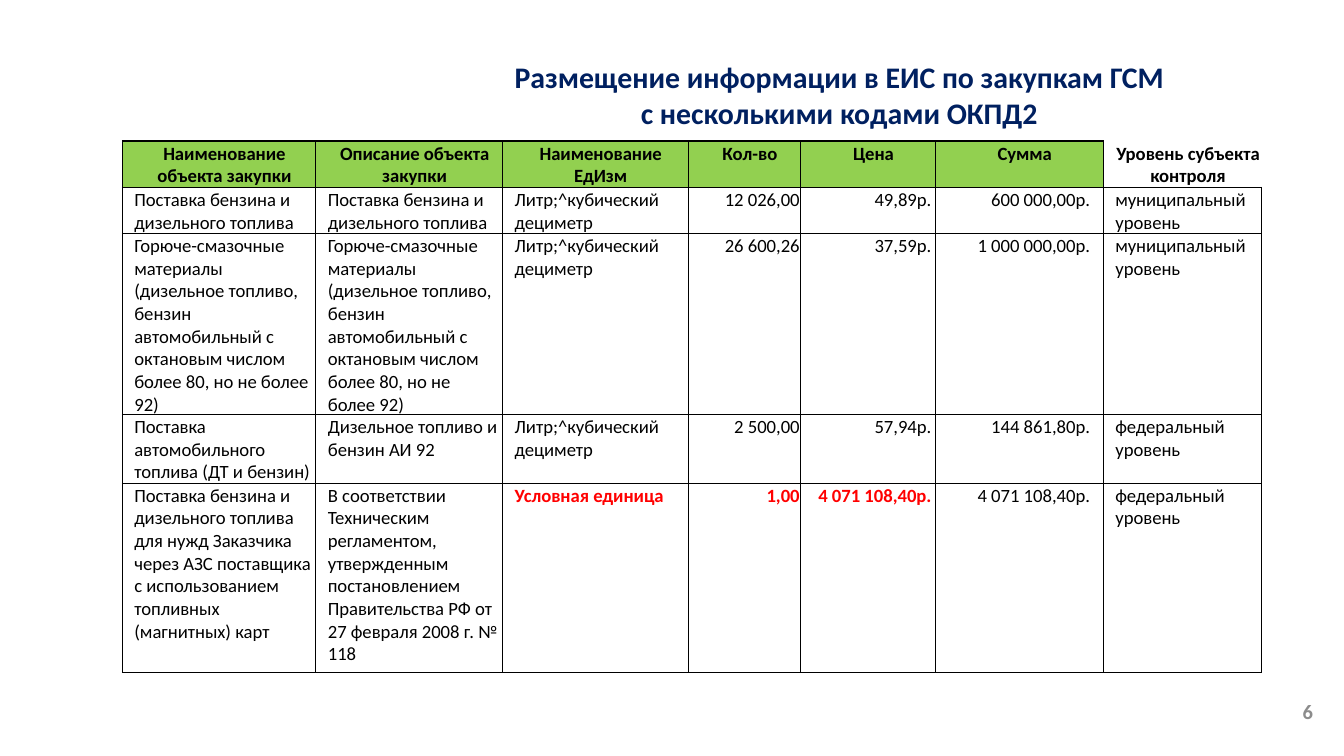
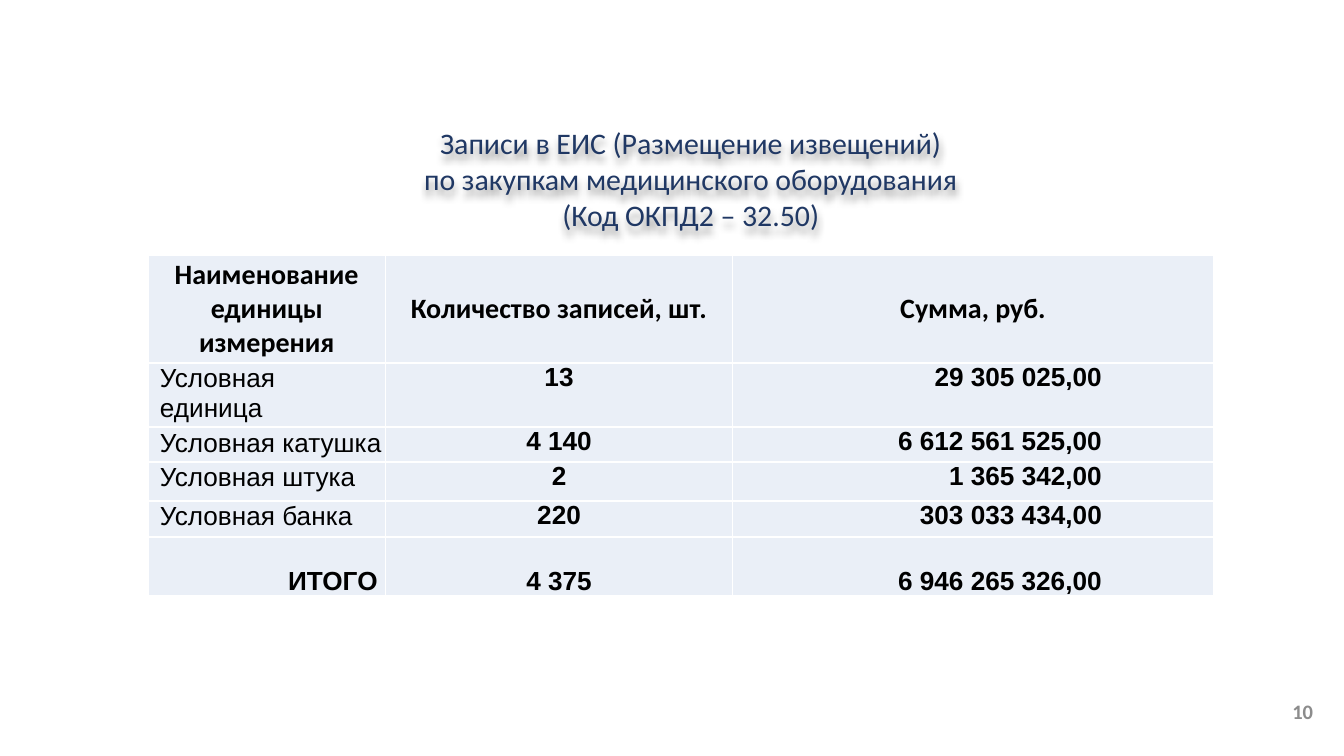
"""Builds two slides of procurement tables with shared titles and page numbers."""
from dataclasses import dataclass, replace

from lxml.etree import SubElement
from pptx import Presentation
from pptx.dml.color import RGBColor
from pptx.enum.text import MSO_ANCHOR as Anchor, MSO_AUTO_SIZE as AutoSize, PP_ALIGN as Align
from pptx.oxml.ns import qn
from pptx.util import Inches, Pt

WIDTH, HEIGHT = Inches(10), Inches(5.625)
COLOURS = {
    "black": "000000", "white": "FFFFFF", "navy": "002060", "blue": "203864",
    "grey": "8C8C8C", "red": "FF0000", "green": "92D050", "pale": "EAEFF7",
}
Insets = tuple[float, float, float, float]
BOX_INSETS = (0.07, 0.04, 0.07, 0.04)


@dataclass(frozen=True)
class TextStyle:
    size: float = 10
    colour: str = "black"
    bold: bool = False
    font: str = "Calibri"
    align: Align = Align.LEFT
    anchor: Anchor = Anchor.TOP
    insets: Insets = BOX_INSETS
    indent: float = 0


@dataclass(frozen=True)
class CellStyle:
    text: TextStyle
    fill: str | None = None
    line: str = "black"
    left: float = 0.5
    right: float = 0.5
    top: float = 0.5
    bottom: float = 0.5


@dataclass(frozen=True)
class Area:
    """A place on the slide, in per cent of its width and height."""
    left: float
    top: float
    width: float
    height: float

    def lengths(self) -> tuple[int, int, int, int]:
        return across(self.left), down(self.top), across(self.width), down(self.height)


@dataclass(frozen=True)
class Grid:
    area: Area
    columns: tuple[float, ...]
    rows: tuple[float, ...]
    cells: list[list[str]]
    styles: list[list[CellStyle]]


def across(percent: float) -> int:
    return round(WIDTH * percent / 100)


def down(percent: float) -> int:
    return round(HEIGHT * percent / 100)


def colour(name: str) -> RGBColor:
    return RGBColor.from_string(COLOURS[name])


def write(frame, text: str, style: TextStyle) -> None:
    frame.text = text
    frame.word_wrap = True
    for para in frame.paragraphs:
        para.alignment = style.align
        if style.indent:
            properties = para._p.get_or_add_pPr()
            properties.set("marL", str(Inches(style.indent)))
            properties.set("indent", "0")
        for span in para.runs:
            span.font.name = style.font
            span.font.size = Pt(style.size)
            span.font.bold = style.bold
            span.font.color.rgb = colour(style.colour)


def set_insets(holder, style: TextStyle) -> None:
    holder.vertical_anchor = style.anchor
    sides = ("left", "top", "right", "bottom")
    for side, inset in zip(sides, style.insets):
        setattr(holder, f"margin_{side}", Inches(inset))


def add_text(page, area: Area, text: str, style: TextStyle):
    box = page.shapes.add_textbox(*area.lengths())
    write(box.text_frame, text, style)
    set_insets(box.text_frame, style)
    return box


def add_shadow(box) -> None:
    effects = SubElement(box._element.spPr, qn("a:effectLst"))
    shadow = SubElement(effects, qn("a:outerShdw"), blurRad="50800", dist="38100", dir="5400000")
    shade = SubElement(shadow, qn("a:srgbClr"), val=COLOURS["black"])
    SubElement(shade, qn("a:alpha"), val="40000")


def set_borders(cell, style: CellStyle) -> None:
    properties = cell._tc.get_or_add_tcPr()
    widths = (style.left, style.right, style.top, style.bottom)
    for position, (side, width) in enumerate(zip("LRTB", widths)):
        line = SubElement(properties, qn(f"a:ln{side}"), w=str(Pt(width)))
        properties.insert(position, line)
        if width:
            fill = SubElement(line, qn("a:solidFill"))
            SubElement(fill, qn("a:srgbClr"), val=COLOURS[style.line])
        else:
            SubElement(line, qn("a:noFill"))


def format_cell(cell, text: str, style: CellStyle) -> None:
    write(cell.text_frame, text, style.text)
    set_insets(cell, style.text)
    if style.fill:
        cell.fill.solid()
        cell.fill.fore_color.rgb = colour(style.fill)
    else:
        cell.fill.background()
    set_borders(cell, style)


def add_grid(page, grid: Grid) -> None:
    frame = page.shapes.add_table(len(grid.rows), len(grid.columns), *grid.area.lengths())
    table = frame.table
    table.first_row = table.horz_banding = False
    for column, width in zip(table.columns, grid.columns):
        column.width = across(width)
    for row, height in zip(table.rows, grid.rows):
        row.height = down(height)
    for row, texts, styles in zip(table.rows, grid.cells, grid.styles):
        for cell, text, style in zip(row.cells, texts, styles):
            format_cell(cell, text, style)
    frame.height = down(grid.area.height)


def add_page(deck, number: int):
    page = deck.slides.add_slide(deck.slide_layouts[6])
    style = TextStyle(11, "grey", True, align=Align.RIGHT, anchor=Anchor.MIDDLE)
    add_text(page, Area(75.9, 91.38, 22.5, 5.33), str(number), style)
    return page


def fuel_grid() -> Grid:
    plain = TextStyle(insets=(0.01, 0.01, 0.01, 0), indent=0.08)
    body = CellStyle(plain)
    amount = CellStyle(replace(plain, align=Align.RIGHT))
    price = CellStyle(replace(amount.text, insets=(0.01, 0.01, 0.03, 0)))
    total = CellStyle(replace(amount.text, insets=(0.01, 0.01, 0.1, 0)))
    head = CellStyle(replace(plain, bold=True, align=Align.CENTER), "green", top=1)
    level_head = replace(head, fill=None, top=0, right=0)
    normal = [body, body, body, amount, price, total, body]
    marked = [
        replace(style, text=replace(style.text, colour="red", bold=True)) if index in (2, 3, 4) else style
        for index, style in enumerate(normal)
    ]
    unit = "Литр;^кубический дециметр"
    petrol = "Поставка бензина и дизельного топлива"
    materials = (
        "Горюче-смазочные материалы (дизельное топливо, бензин автомобильный "
        "с октановым числом более 80, но не более 92)"
    )
    city, federal = "муниципальный уровень", "федеральный уровень"
    cells = [
        ["Наименование объекта закупки", "Описание объекта закупки", "Наименование ЕдИзм",
         "Кол-во", "Цена", "Сумма", "Уровень субъекта контроля"],
        [petrol, petrol, unit, "12 026,00", "49,89р.", "600 000,00р.", city],
        [materials, materials, unit, "26 600,26", "37,59р.", "1 000 000,00р.", city],
        ["Поставка автомобильного топлива (ДТ и бензин)", "Дизельное топливо и бензин АИ 92",
         unit, "2 500,00", "57,94р.", "144 861,80р.", federal],
        [f"{petrol} для нужд Заказчика через АЗС поставщика с использованием топливных (магнитных) карт",
         "В соответствии Техническим регламентом, утвержденным постановлением "
         "Правительства РФ от 27 февраля 2008 г. № 118",
         "Условная единица", "1,00", "4 071 108,40р.", "4 071 108,40р.", federal],
    ]
    return Grid(
        Area(9.1, 18.67, 84.8, 69.87),
        (14.4, 13.9, 13.8, 8.4, 10, 12.5, 11.8),
        (3.91, 5.16, 15.64, 8.89, 25.07),
        cells,
        [[head] * 6 + [level_head], normal, normal, normal, marked],
    )


def medical_grid() -> Grid:
    def pale(text: TextStyle) -> CellStyle:
        return CellStyle(text, "pale", "white", 1, 1, 1, 1)

    heading = TextStyle(15, bold=True, align=Align.CENTER, anchor=Anchor.MIDDLE, insets=(0.06, 0, 0.06, 0))
    label = TextStyle(14, font="Arial", insets=(0.01, 0.01, 0.01, 0), indent=0.08)
    count = TextStyle(14, bold=True, font="Arial", align=Align.CENTER, insets=(0.07, 0, 0.07, 0))
    money = replace(count, align=Align.RIGHT, insets=(0.07, 0, 0.83, 0))
    total = replace(money, insets=heading.insets)
    normal = [pale(style) for style in (label, count, money)]
    final = [pale(replace(style, anchor=Anchor.BOTTOM)) for style in (total, count, money)]
    cells = [
        ["Наименование единицы измерения", "Количество записей, шт.", "Сумма, руб."],
        ["Условная единица", "13", "29 305 025,00"],
        ["Условная катушка", "4 140", "6 612 561 525,00"],
        ["Условная штука", "2", "1 365 342,00"],
        ["Условная банка", "220", "303 033 434,00"],
        ["ИТОГО", "4 375", "6 946 265 326,00"],
    ]
    return Grid(
        Area(11, 33.78, 79.3, 41.6),
        (17.7, 25.8, 35.8),
        (14.22, 4.62, 4.62, 5.16, 4.8, 7.82),
        cells,
        [[pale(heading)] * 3] + [normal] * 4 + [final],
    )


def main() -> None:
    deck = Presentation()
    deck.slide_width, deck.slide_height = WIDTH, HEIGHT
    title = TextStyle(16, "blue", align=Align.CENTER)

    page = add_page(deck, 6)
    box = add_text(
        page, Area(29, 6.93, 66.9, 11.38),
        "Размещение информации в ЕИС по закупкам ГСМ\vс несколькими кодами ОКПД2",
        replace(title, colour="navy", bold=True, insets=(0.1, 0.05, 0.1, 0.05)),
    )
    box.text_frame.auto_size = AutoSize.SHAPE_TO_FIT_TEXT
    add_grid(page, fuel_grid())

    page = add_page(deck, 10)
    box = add_text(
        page, Area(8.5, 15.82, 85.8, 16.36),
        "Записи в ЕИС (Размещение извещений)\vпо закупкам медицинского оборудования\v(Код ОКПД2 – 32.50)",
        title,
    )
    add_shadow(box)
    add_grid(page, medical_grid())
    deck.save("out.pptx")


if __name__ == "__main__":
    main()
